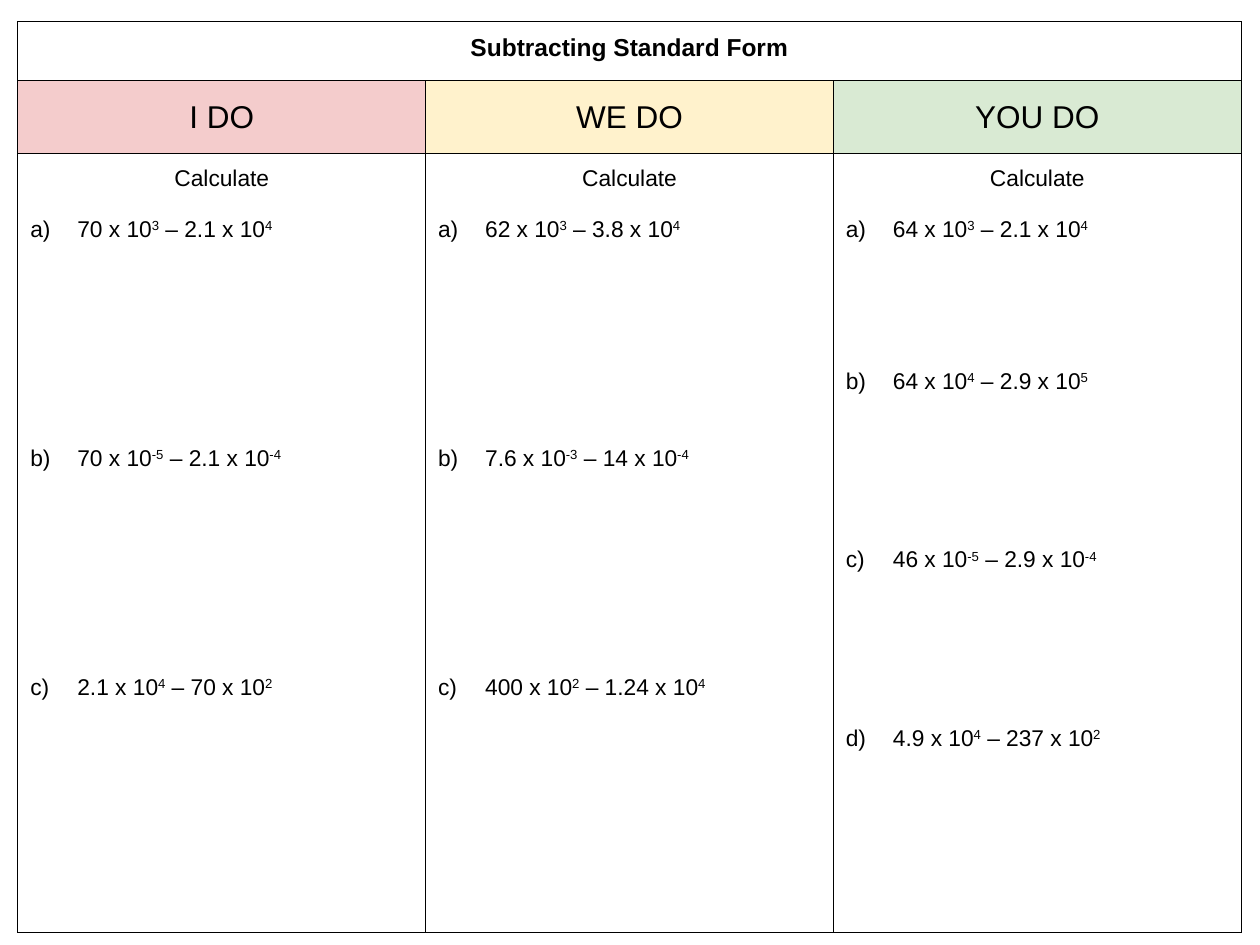
from lxml.etree import SubElement
from pptx import Presentation
from pptx.dml.color import RGBColor
from pptx.enum.text import MSO_ANCHOR, PP_ALIGN
from pptx.oxml.ns import qn
from pptx.util import Cm, Pt

COLORS = {
    "text": "000000",
    "border": "000000",
    "page": "FFFFFF",
    "i_do": "F4CCCC",
    "we_do": "FFF2CC",
    "you_do": "D9EAD3",
}
LINE_PITCH = 14.55  # points per line of 13 pt text

# Each question: two terms, each a coefficient and a power of ten
COLUMNS = [
    {"heading": "I DO", "fill": "i_do", "line_gaps": [2, 9, 9], "questions": [
        (("70", "3"), ("2.1", "4")),
        (("70", "-5"), ("2.1", "-4")),
        (("2.1", "4"), ("70", "2")),
    ]},
    {"heading": "WE DO", "fill": "we_do", "line_gaps": [2, 9, 9], "questions": [
        (("62", "3"), ("3.8", "4")),
        (("7.6", "-3"), ("14", "-4")),
        (("400", "2"), ("1.24", "4")),
    ]},
    {"heading": "YOU DO", "fill": "you_do", "line_gaps": [2, 6, 7, 7], "questions": [
        (("64", "3"), ("2.1", "4")),
        (("64", "4"), ("2.9", "5")),
        (("46", "-5"), ("2.9", "-4")),
        (("4.9", "4"), ("237", "2")),
    ]},
]
CELL_FORMAT = {
    "margin_left": Cm(0.25),
    "margin_right": Cm(0.25),
    "margin_top": Cm(0.25),
    "margin_bottom": Cm(0.25),
}


def add_text(paragraph, text, size, bold=False, superscript=False):
    run = paragraph.add_run()
    run.text = text
    font_format = {"name": "Arial", "size": Pt(size), "bold": bold}
    for attribute, value in font_format.items():
        setattr(run.font, attribute, value)
    run.font.color.rgb = RGBColor.from_string(COLORS["text"])
    if superscript:
        run.font._element.set("baseline", "30000")


def format_cell(cell, fill):
    for attribute, value in CELL_FORMAT.items():
        setattr(cell, attribute, value)
    properties = cell._tc.get_or_add_tcPr()
    for side in ("lnL", "lnR", "lnT", "lnB"):
        line = SubElement(properties, qn(f"a:{side}"), w=str(Pt(0.75)))
        line_fill = SubElement(line, qn("a:solidFill"))
        SubElement(line_fill, qn("a:srgbClr"), val=COLORS["border"])
    cell.fill.solid()
    cell.fill.fore_color.rgb = RGBColor.from_string(COLORS[fill])


presentation = Presentation()
presentation.slide_width = Cm(25.4)
presentation.slide_height = Cm(19.05)
slide = presentation.slides.add_slide(presentation.slide_layouts[6])

# Table grid
column_width = Cm(8.22)
row_heights = [Cm(1.19), Cm(1.46), Cm(15.7)]
table = slide.shapes.add_table(
    len(row_heights), len(COLUMNS), Cm(0.36), Cm(0.44),
    column_width * len(COLUMNS), sum(row_heights),
).table
table.first_row = False
table.horz_banding = False
for row, height in zip(table.rows, row_heights):
    row.height = height
for column in table.columns:
    column.width = column_width

# Topic across the top row
for cell in table.rows[0].cells:
    format_cell(cell, "page")
topic_cell = table.cell(0, 0)
topic_cell.merge(table.cell(0, len(COLUMNS) - 1))
paragraph = topic_cell.text_frame.paragraphs[0]
paragraph.alignment = PP_ALIGN.CENTER
add_text(paragraph, "Subtracting Standard Form", 14, bold=True)

for index, column in enumerate(COLUMNS):
    # Coloured heading
    heading_cell = table.cell(1, index)
    format_cell(heading_cell, column["fill"])
    heading_cell.vertical_anchor = MSO_ANCHOR.MIDDLE
    paragraph = heading_cell.text_frame.paragraphs[0]
    paragraph.alignment = PP_ALIGN.CENTER
    add_text(paragraph, column["heading"], 18)

    # Instruction
    question_cell = table.cell(2, index)
    format_cell(question_cell, "page")
    paragraph = question_cell.text_frame.paragraphs[0]
    paragraph.alignment = PP_ALIGN.CENTER
    add_text(paragraph, "Calculate", 13)

    # Lettered questions with working space above each
    for terms, lines in zip(column["questions"], column["line_gaps"]):
        paragraph = question_cell.text_frame.add_paragraph()
        paragraph.alignment = PP_ALIGN.LEFT
        paragraph.space_before = Pt((lines - 1) * LINE_PITCH)
        properties = paragraph._p.get_or_add_pPr()
        properties.set("marL", str(Cm(0.95)))
        properties.set("indent", str(-Cm(0.95)))
        bullet_color = SubElement(properties, qn("a:buClr"))
        SubElement(bullet_color, qn("a:srgbClr"), val=COLORS["text"])
        SubElement(properties, qn("a:buFont"), typeface="Arial")
        SubElement(properties, qn("a:buAutoNum"), type="alphaLcParenR")
        for prefix, (coefficient, power) in zip(("", " – "), terms):
            add_text(paragraph, f"{prefix}{coefficient} x 10", 13)
            add_text(paragraph, power, 13, superscript=True)

presentation.save("out.pptx")
